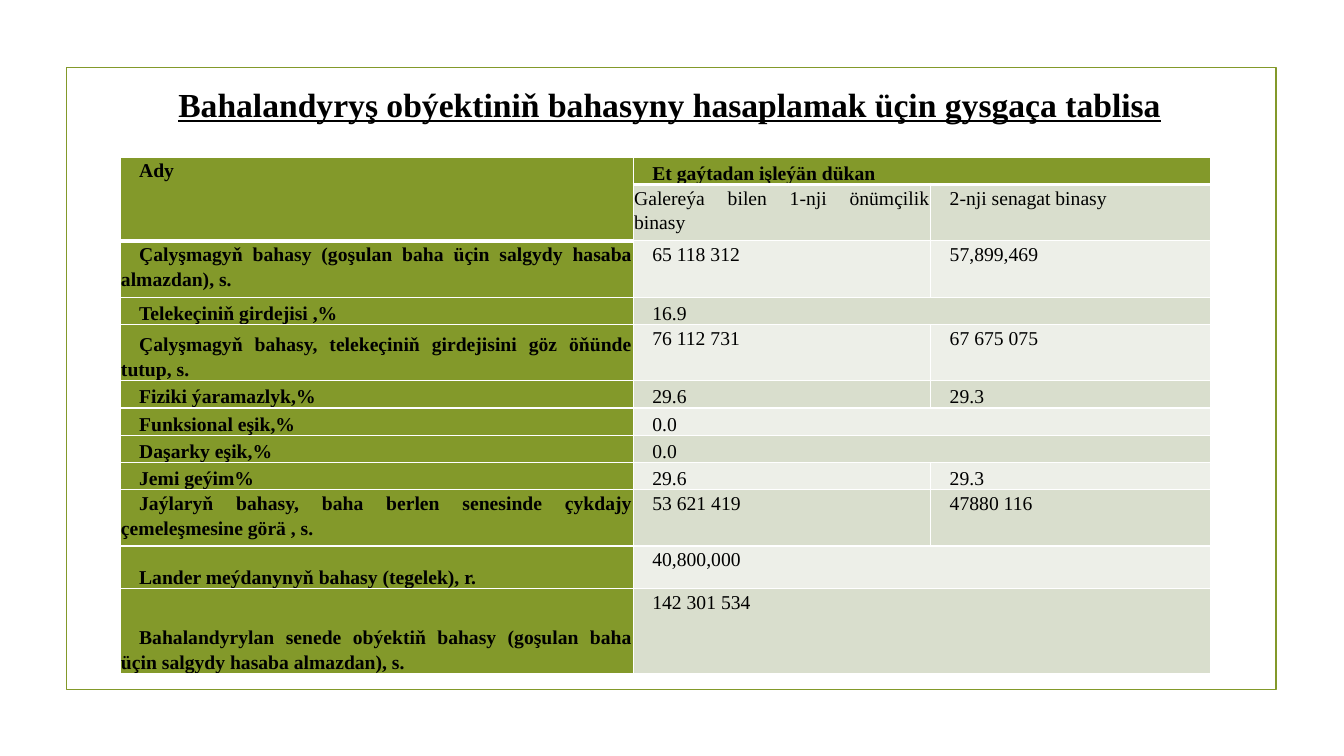
from pptx import Presentation
from pptx.dml.color import RGBColor
from pptx.enum.shapes import MSO_SHAPE
from pptx.enum.text import MSO_ANCHOR, PP_ALIGN
from pptx.oxml import parse_xml
from pptx.oxml.ns import nsdecls
from pptx.util import Inches, Pt

RECTANGLE = MSO_SHAPE.RECTANGLE
TOP, BOTTOM = MSO_ANCHOR.TOP, MSO_ANCHOR.BOTTOM
LEFT, JUSTIFY = PP_ALIGN.LEFT, PP_ALIGN.JUSTIFY

GREEN = RGBColor(0x83, 0x99, 0x2A)
DARK_BAND = RGBColor(0xD9, 0xDE, 0xCD)
LIGHT_BAND = RGBColor(0xED, 0xEF, 0xE8)
BLACK = RGBColor(0, 0, 0)
FONT = "Times New Roman"

COLUMN_WIDTHS = (5.09, 2.95, 2.78)
SINGLE, DOUBLE = 0.27, 0.56
THIN, THICK = 1, 3
INDENT = 0.18
TOP_LABEL_ROWS = (0, 2, 9)
ROWS = (
    (SINGLE, "Ady", "Et gaýtadan işleýän dükan"),
    (DOUBLE, "", "Galereýa bilen 1-nji önümçilik binasy", "2-nji senagat binasy"),
    (DOUBLE, "Çalyşmagyň bahasy (goşulan baha üçin salgydy hasaba almazdan), s.",
     "65 118 312", "57,899,469"),
    (SINGLE, "Telekeçiniň girdejisi ,%", "16.9"),
    (DOUBLE, "Çalyşmagyň bahasy, telekeçiniň girdejisini göz öňünde tutup, s.",
     "76 112 731", "67 675 075"),
    (SINGLE, "Fiziki ýaramazlyk,%", "29.6", "29.3"),
    (SINGLE, "Funksional eşik,%", "0.0"),
    (SINGLE, "Daşarky eşik,%", "0.0"),
    (SINGLE, "Jemi geýim%", "29.6", "29.3"),
    (DOUBLE, "Jaýlaryň bahasy, baha berlen senesinde çykdajy çemeleşmesine görä , s.",
     "53 621 419", "47880 116"),
    (0.42, "Lander meýdanynyň bahasy (tegelek), r.", "40,800,000"),
    (0.85, "Bahalandyrylan senede obýektiň bahasy (goşulan baha üçin salgydy hasaba almazdan), s.",
     "142 301 534"),
)


def write_text(frame, text, size=14, bold=False, underline=False,
               align=LEFT, indent=0, spacing=1.0):
    """Write one formatted paragraph into a text frame."""
    frame.word_wrap = True
    paragraph = frame.paragraphs[0]
    paragraph.alignment = align
    paragraph.line_spacing = spacing
    if indent:
        properties = paragraph._p.get_or_add_pPr()
        properties.set("marL", "0")
        properties.set("indent", str(Inches(indent)))
    run = paragraph.add_run()
    run.text = text
    run.font.name = FONT
    run.font.size = Pt(size)
    run.font.bold = bold
    run.font.underline = underline
    run.font.color.rgb = BLACK


def add_frame(slide, left, top, width, height):
    """Draw the green outline around the slide content."""
    shape = slide.shapes.add_shape(
        RECTANGLE, Inches(left), Inches(top), Inches(width), Inches(height))
    shape.shadow.inherit = False
    shape.fill.background()
    shape.line.color.rgb = GREEN
    shape.line.width = Pt(1.25)


def add_title(slide, left, top, width, height):
    """Add the underlined heading."""
    box = slide.shapes.add_textbox(
        Inches(left), Inches(top), Inches(width), Inches(height))
    write_text(box.text_frame,
               "Bahalandyryş obýektiniň bahasyny hasaplamak üçin gysgaça tablisa",
               size=24, bold=True, underline=True)


def format_cell(cell, fill, anchor, top_border, bottom_border):
    """Set the margins, white borders, anchor and fill of a cell."""
    cell.margin_left = cell.margin_right = Inches(0.01)
    cell.margin_top = cell.margin_bottom = 0
    cell.vertical_anchor = anchor
    borders = {"lnL": THIN, "lnR": THIN, "lnT": top_border, "lnB": bottom_border}
    for tag, width in borders.items():
        cell._tc.get_or_add_tcPr().append(parse_xml(
            f'<a:{tag} {nsdecls("a")} w="{Pt(width)}"><a:solidFill>'
            f'<a:srgbClr val="FFFFFF"/></a:solidFill></a:{tag}>'))
    cell.fill.solid()
    cell.fill.fore_color.rgb = fill


def add_valuation_table(slide, left, top, width, height):
    """Add the valuation table with its merged cells."""
    table = slide.shapes.add_table(
        len(ROWS), len(COLUMN_WIDTHS), Inches(left), Inches(top),
        Inches(width), Inches(height)).table
    table.first_row = table.horz_banding = False
    for column, column_width in zip(table.columns, COLUMN_WIDTHS):
        column.width = Inches(column_width)
    for row, (row_height, *texts) in enumerate(ROWS):
        table.rows[row].height = Inches(row_height)
        band = DARK_BAND if row % 2 else LIGHT_BAND
        for column in range(len(COLUMN_WIDTHS)):
            is_label = column == 0
            if is_label:
                anchor = TOP if row in TOP_LABEL_ROWS else BOTTOM
            else:
                anchor = BOTTOM if row_height == SINGLE else TOP
            header_end = 1 if is_label else 0
            cell = table.cell(row, column)
            format_cell(cell, GREEN if is_label or row == 0 else band, anchor,
                        THICK if row == header_end + 1 else THIN,
                        THICK if row == header_end else THIN)
            if column < len(texts) and texts[column]:
                write_text(cell.text_frame, texts[column],
                           bold=is_label or row == 0, align=JUSTIFY, spacing=1.15,
                           indent=0 if (row, column) == (1, 1) else INDENT)
        if len(texts) == 2:
            table.cell(row, 1).merge(table.cell(row, 2))
    table.cell(0, 0).merge(table.cell(1, 0))


def main():
    """Build and save the presentation."""
    presentation = Presentation()
    presentation.slide_width = Inches(13.33)
    presentation.slide_height = Inches(7.5)
    slide = presentation.slides.add_slide(presentation.slide_layouts[6])
    add_frame(slide, 0.66, 0.67, 12, 6.17)
    add_title(slide, 1.67, 0.78, 10.45, 0.5)
    add_valuation_table(slide, 1.19, 1.56, 10.82, 5.09)
    presentation.save("out.pptx")


if __name__ == "__main__":
    main()
